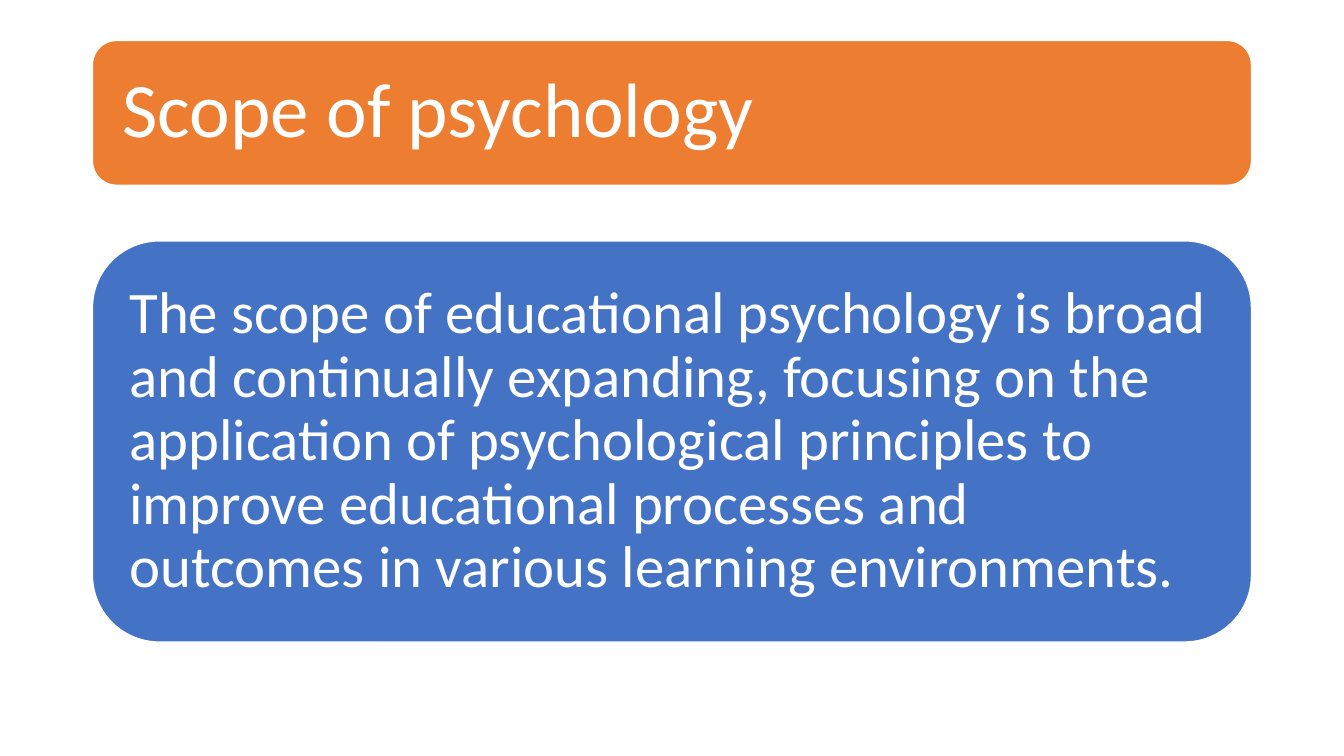
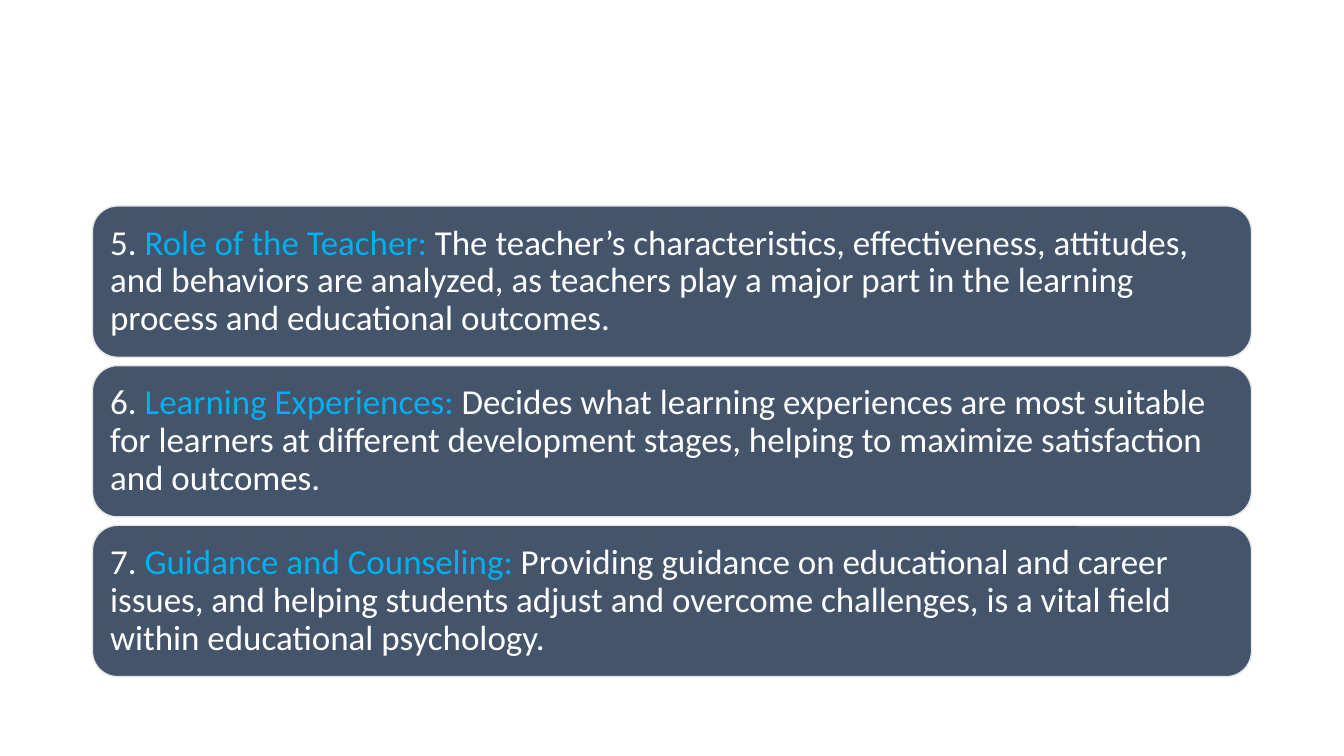
from pptx import Presentation
from pptx.dml.color import RGBColor
from pptx.enum.shapes import MSO_SHAPE
from pptx.enum.text import MSO_ANCHOR, MSO_AUTO_SIZE, PP_ALIGN
from pptx.util import Cm, Pt

ROUND = MSO_SHAPE.ROUNDED_RECTANGLE
MIDDLE = MSO_ANCHOR.MIDDLE
LEFT = PP_ALIGN.LEFT
NO_FIT = MSO_AUTO_SIZE.NONE

FONT = "Calibri"
COLORS = {
    "white": "FFFFFF",
    "orange": "ED7D31",
    "blue": "4472C4",
    "slate": "44546A",
    "pale": "E7E6E6",
    "cyan": "00B0F0",
}
TITLE_ONLY, BLANK = 5, 6
EDGE, WIDE = 2.33, 29.21

SCOPE = (
    "The scope of educational psychology is broad and continually expanding, "
    "focusing on the application of psychological principles to improve "
    "educational processes and outcomes in various learning environments."
)
TOPICS = [
    ("Role of the Teacher: ",
     "The teacher’s characteristics, effectiveness, attitudes, and behaviors "
     "are analyzed, as teachers play a major part in the learning process and "
     "educational outcomes."),
    ("Learning Experiences: ",
     "Decides what learning experiences are most suitable for learners at "
     "different development stages, helping to maximize satisfaction and "
     "outcomes."),
    ("Guidance and Counseling: ",
     "Providing guidance on educational and career issues, and helping "
     "students adjust and overcome challenges, is a vital field within "
     "educational psychology."),
]


def color(name):
    return RGBColor.from_string(COLORS[name])


def write(shape, runs, size, inset):
    """Fill a shape with one left-aligned paragraph of (text, colour) runs."""
    frame = shape.text_frame
    frame.word_wrap = True
    frame.auto_size = NO_FIT
    frame.vertical_anchor = MIDDLE
    frame.margin_left = frame.margin_right = Cm(inset)
    frame.margin_top = frame.margin_bottom = Cm(inset)
    para = frame.paragraphs[0]
    para.alignment = LEFT
    para.line_spacing = 0.9
    for text, tint in runs:
        run = para.add_run()
        run.text = text
        run.font.name = FONT
        run.font.size = Pt(size)
        run.font.color.rgb = color(tint)


def add_card(slide, box, fill, line="white"):
    card = slide.shapes.add_shape(ROUND, *map(Cm, box))
    card.shadow.inherit = False
    card.fill.solid()
    card.fill.fore_color.rgb = color(fill)
    card.line.color.rgb = color(line)
    card.line.width = Pt(1)
    return card


def add_title(slide, box, text):
    """Lay the title placeholder over an orange band."""
    band = add_card(slide, box, "orange")
    title = slide.shapes.title
    band.element.addnext(title.element)
    left, top, width, height = box
    pad = 0.18
    title.left, title.top = Cm(left + pad), Cm(top + pad)
    title.width, title.height = Cm(width - 2 * pad), Cm(height - 2 * pad)
    write(title, [(text, "white")], 55, 0.58)


def add_topics(slide, box, topics, first, gap=0.21):
    """Stack numbered cards of equal height in the box."""
    left, top, width, height = box
    count = len(topics)
    tall = (height - gap * (count - 1)) / count
    for row, (head, text) in enumerate(topics):
        place = (left, top + row * (tall + gap), width, tall)
        card = add_card(slide, place, "slate", "pale")
        runs = [(f"{first + row}. ", "white"), (head, "cyan"), (text, "white")]
        write(card, runs, 25, 0.26)


def build_scope(deck):
    slide = deck.slides.add_slide(deck.slide_layouts[TITLE_ONLY])
    add_title(slide, (EDGE, 1.02, WIDE, 3.65), "Scope of psychology")
    card = add_card(slide, (EDGE, 6.07, WIDE, 10.11), "blue")
    write(card, [(SCOPE, "white")], 42, 0.44)


def build_topics(deck):
    slide = deck.slides.add_slide(deck.slide_layouts[BLANK])
    add_topics(slide, (EDGE, 5.19, WIDE, 11.86), TOPICS, 5)


def main():
    deck = Presentation()
    deck.slide_width, deck.slide_height = Cm(33.87), Cm(19.05)
    build_scope(deck)
    build_topics(deck)
    deck.save("out.pptx")


if __name__ == "__main__":
    main()
